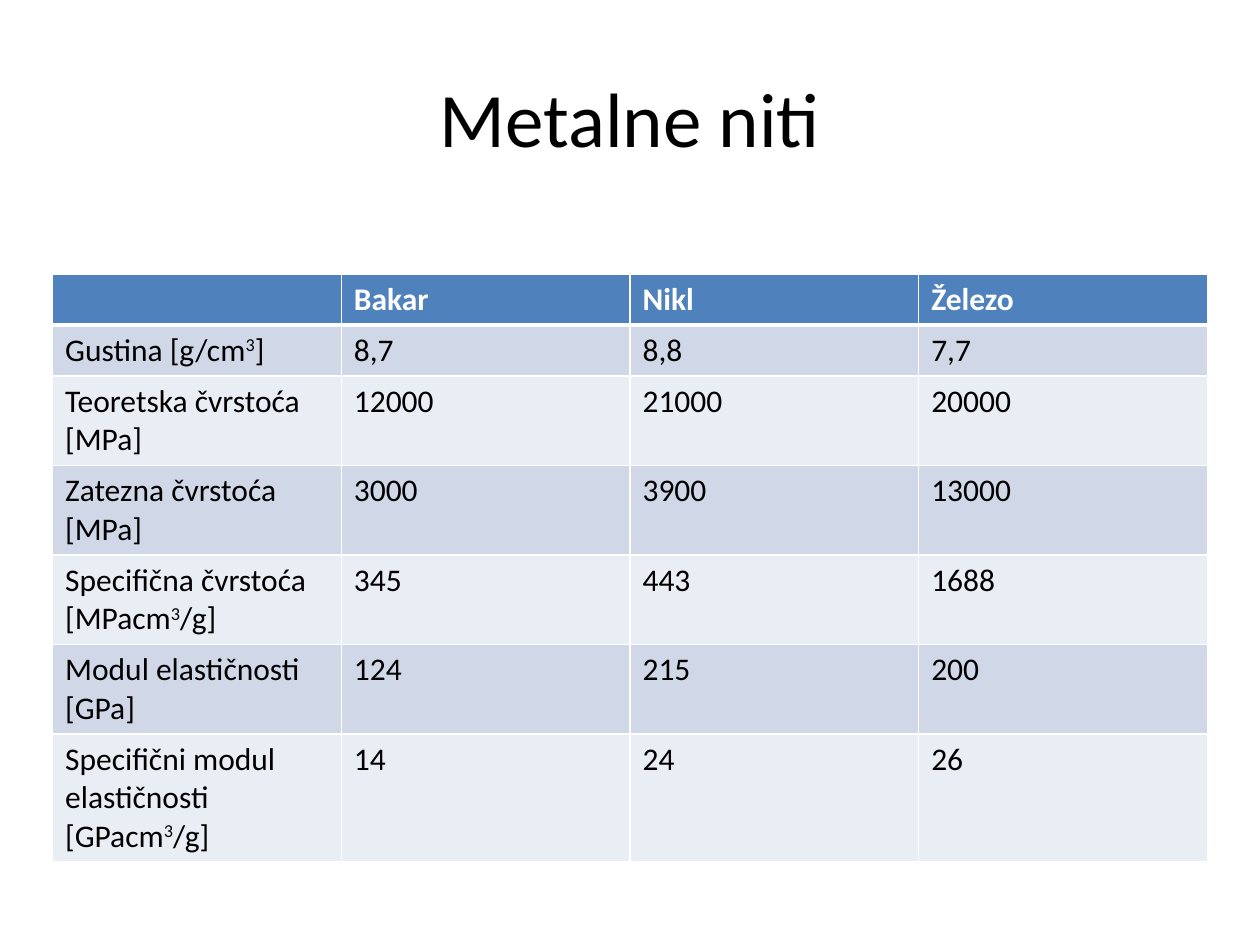
from lxml import etree
from pptx import Presentation
from pptx import util as u
from pptx.dml.color import RGBColor
from pptx.enum import text
from pptx.oxml.ns import qn

BLACK = RGBColor(0x00, 0x00, 0x00)
WHITE = RGBColor(0xFF, 0xFF, 0xFF)
HEADER_BLUE = RGBColor(0x4F, 0x81, 0xBD)
BAND_DARK = RGBColor(0xD0, 0xD8, 0xE8)
BAND_LIGHT = RGBColor(0xE9, 0xED, 0xF4)

# Text between two ^ marks is raised.
METAL_ROWS = [
    ("", "Bakar", "Nikl", "Železo"),
    ("Gustina [g/cm^3^]", "8,7", "8,8", "7,7"),
    ("Teoretska čvrstoća [MPa]", "12000", "21000", "20000"),
    ("Zatezna čvrstoća [MPa]", "3000", "3900", "13000"),
    ("Specifična čvrstoća [MPacm^3^/g]", "345", "443", "1688"),
    ("Modul elastičnosti [GPa]", "124", "215", "200"),
    ("Specifični modul elastičnosti [GPacm^3^/g]", "14", "24", "26"),
]


class SlideBuilder:
    font_name = "Calibri"
    title_format = {"size": u.Pt(44), "bold": False}
    header_format = {"size": u.Pt(18), "bold": True}
    body_format = {"size": u.Pt(18), "bold": False}

    def __init__(self, deck):
        self.slide = deck.slides.add_slide(deck.slide_layouts[5])

    def add_spans(self, para, content, color, formats):
        """Add the content to the paragraph, raising what stands between ^ marks."""
        for index, part in enumerate(content.split("^")):
            if not part:
                continue
            span = para.add_run()
            span.text = part
            span.font.color.rgb = color
            for name, value in {"name": self.font_name, **formats}.items():
                setattr(span.font, name, value)
            if index % 2:
                span.font._element.set("baseline", "30000")

    def title(self, content, left, top, width, height):
        box = self.slide.shapes.title
        place = {"left": left, "top": top, "width": width, "height": height}
        for name, value in place.items():
            setattr(box, name, u.Cm(value))
        box.text_frame.vertical_anchor = text.MSO_ANCHOR.MIDDLE
        para = box.text_frame.paragraphs[0]
        para.alignment = text.PP_ALIGN.CENTER
        self.add_spans(para, content, BLACK, self.title_format)

    def table(self, rows, left, top, width, row_height):
        frame = self.slide.shapes.add_table(
            len(rows), len(rows[0]), u.Cm(left), u.Cm(top),
            u.Cm(width), u.Cm(row_height * len(rows)))
        for row_index, row in enumerate(rows):
            is_header = row_index == 0
            band = BAND_DARK if row_index % 2 else BAND_LIGHT
            for column_index, content in enumerate(row):
                cell = frame.table.cell(row_index, column_index)
                self.borders(cell, top=3 if row_index == 1 else 1,
                             bottom=3 if is_header else 1)
                cell.fill.solid()
                cell.fill.fore_color.rgb = HEADER_BLUE if is_header else band
                self.add_spans(cell.text_frame.paragraphs[0], content,
                               WHITE if is_header else BLACK,
                               self.header_format if is_header else self.body_format)

    def borders(self, cell, top, bottom):
        """Draw white cell borders; top and bottom widths are in points."""
        properties = cell._tc.get_or_add_tcPr()
        for tag, width in {"lnL": 1, "lnR": 1, "lnT": top, "lnB": bottom}.items():
            line = etree.SubElement(properties, qn(f"a:{tag}"), w=str(u.Pt(width)))
            fill = etree.SubElement(line, qn("a:solidFill"))
            etree.SubElement(fill, qn("a:srgbClr"), val=str(WHITE))


def main():
    deck = Presentation()
    deck.slide_width, deck.slide_height = u.Cm(25.4), u.Cm(19.05)
    builder = SlideBuilder(deck)
    builder.title("Metalne niti", left=1.27, top=0.76, width=22.86, height=3.18)
    builder.table(METAL_ROWS, left=1.06, top=5.52, width=23.28, row_height=1.03)
    deck.save("out.pptx")


if __name__ == "__main__":
    main()
